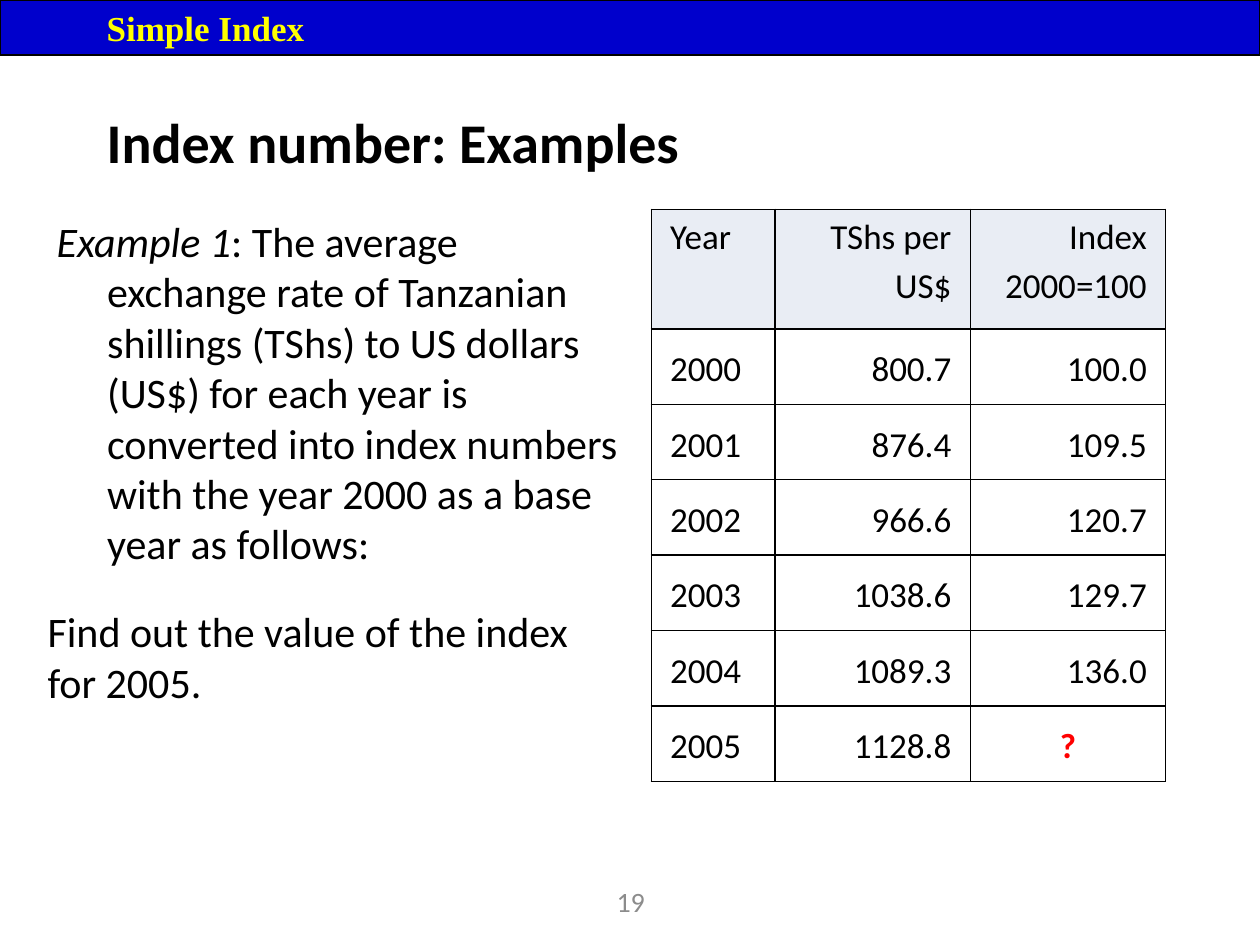
from lxml.etree import SubElement
from pptx import Presentation
from pptx.dml.color import RGBColor
from pptx.enum.shapes import MSO_SHAPE
from pptx.enum.text import MSO_ANCHOR, PP_ALIGN
from pptx.oxml import parse_xml
from pptx.oxml.ns import nsdecls, qn
from pptx.util import Cm, Pt

COLORS = {
    "bar": "0000CC", "bar_text": "FFFF00", "text": "000000", "number": "8C8C8C",
    "header": "E9EDF4", "cell": "FFFFFF", "border": "000000", "unknown": "FF0000",
}
SECTION = "Simple Index"
TITLE = "Index number: Examples"
EXAMPLE = [
    ("Example 1", True),
    (": The average exchange rate of Tanzanian shillings (TShs) to US dollars (US$) "
     "for each year is converted into index numbers with the year 2000 as a base year "
     "as follows:", False),
]
TASK = "Find out the value of the index for 2005."
PAGE_NUMBER = "19"
UNKNOWN = "?"
RATES = [
    ("Year", "TShs per US$", "Index 2000=100"),
    ("2000", "800.7", "100.0"),
    ("2001", "876.4", "109.5"),
    ("2002", "966.6", "120.7"),
    ("2003", "1038.6", "129.7"),
    ("2004", "1089.3", "136.0"),
    ("2005", "1128.8", UNKNOWN),
]
COLUMN_WIDTHS = [2.49, 3.94, 3.94]
HEADER_HEIGHT, ROW_HEIGHT = 2.41, 1.52
CELL_INSET = 0.38


def rgb(name):
    return RGBColor.from_string(COLORS[name])


def set_font(paragraph, size, color="text", bold=False, face="Calibri"):
    font = paragraph.font
    font.name, font.size, font.bold = face, Pt(size), bold
    font.color.rgb = rgb(color)


def set_indent(paragraph, left, first):
    properties = paragraph._p.get_or_add_pPr()
    properties.set("marL", str(Cm(left)))
    properties.set("indent", str(Cm(first)))


def add_text(slide, box, text, size, color="text", bold=False,
             anchor=MSO_ANCHOR.TOP, align=PP_ALIGN.LEFT):
    frame = slide.shapes.add_textbox(*map(Cm, box)).text_frame
    frame.word_wrap = True
    frame.vertical_anchor = anchor
    paragraph = frame.paragraphs[0]
    paragraph.text = text
    paragraph.alignment = align
    set_font(paragraph, size, color, bold)
    return paragraph


def add_section_bar(slide):
    bar = slide.shapes.add_shape(MSO_SHAPE.RECTANGLE, 0, 0, Cm(25.4), Cm(1.11))
    bar.shadow.inherit = False
    bar.fill.solid()
    bar.fill.fore_color.rgb = rgb("bar")
    bar.line.color.rgb = rgb("border")
    bar.line.width = Pt(0.75)
    heading = bar.text_frame.paragraphs[0]
    heading.text = SECTION
    heading.alignment = PP_ALIGN.LEFT
    set_font(heading, 20, "bar_text", True, "Times New Roman")
    set_indent(heading, 0, 1.9)


def add_borders(cell):
    """Put the four side lines ahead of the fill, as the schema asks."""
    properties = cell._tc.get_or_add_tcPr()
    for position, side in enumerate(("lnL", "lnR", "lnT", "lnB")):
        line = parse_xml(f'<a:{side} {nsdecls("a")} w="{Pt(1)}"/>')
        fill = SubElement(line, qn("a:solidFill"))
        SubElement(fill, qn("a:srgbClr"), val=COLORS["border"])
        properties.insert(position, line)


def fill_cell(cell, text, is_header, is_year):
    cell.fill.solid()
    cell.fill.fore_color.rgb = rgb("header" if is_header else "cell")
    cell.margin_left = cell.margin_right = Cm(CELL_INSET)
    cell.margin_top = cell.margin_bottom = 0
    cell.vertical_anchor = MSO_ANCHOR.TOP if is_header else MSO_ANCHOR.MIDDLE
    value = cell.text_frame.paragraphs[0]
    value.text = text
    value.line_spacing = 1.15
    value.space_before = Pt(6)
    if text == UNKNOWN:
        value.alignment = PP_ALIGN.CENTER
        set_font(value, 20, "unknown", True)
    else:
        value.alignment = PP_ALIGN.LEFT if is_year else PP_ALIGN.RIGHT
        set_font(value, 20)
    add_borders(cell)


def add_rate_table(slide):
    heights = [HEADER_HEIGHT] + [ROW_HEIGHT] * (len(RATES) - 1)
    table = slide.shapes.add_table(
        len(RATES), len(COLUMN_WIDTHS), Cm(13.13), Cm(4.22),
        Cm(sum(COLUMN_WIDTHS)), Cm(sum(heights))).table
    for column, width in zip(table.columns, COLUMN_WIDTHS):
        column.width = Cm(width)
    for r, (height, record) in enumerate(zip(heights, RATES)):
        table.rows[r].height = Cm(height)
        for c, text in enumerate(record):
            fill_cell(table.cell(r, c), text, r == 0, c == 0)


def main():
    deck = Presentation()
    deck.slide_width, deck.slide_height = Cm(25.4), Cm(19.05)
    slide = deck.slides.add_slide(deck.slide_layouts[6])

    add_text(slide, (8.69, 17.65, 8.05, 1.02), PAGE_NUMBER, 16, "number",
             anchor=MSO_ANCHOR.MIDDLE, align=PP_ALIGN.CENTER)
    add_text(slide, (1.9, 1.73, 22.23, 2.21), TITLE, 32, bold=True,
             anchor=MSO_ANCHOR.MIDDLE)
    example = add_text(slide, (0.89, 4.22, 11.81, 7.44), "", 24)
    set_indent(example, 1.02, -1.02)
    for text, italic in EXAMPLE:
        run = example.add_run()
        run.text = text
        run.font.italic = italic
    add_rate_table(slide)
    add_text(slide, (0.71, 12.09, 11.61, 2.31), TASK, 24)
    add_section_bar(slide)

    deck.save("out.pptx")


if __name__ == "__main__":
    main()
